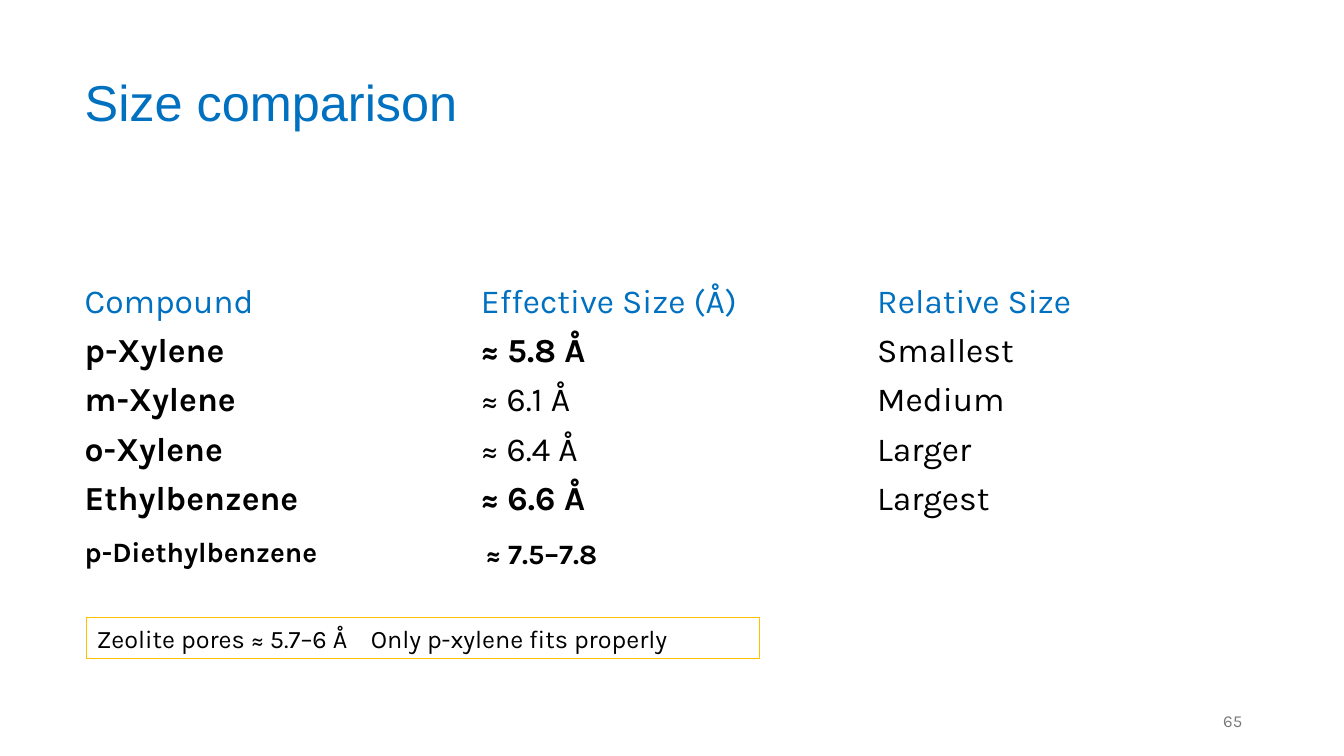
from pptx import Presentation
from pptx.dml.color import RGBColor
from pptx.enum import shapes, text
from pptx.oxml import parse_xml
from pptx.oxml.ns import nsdecls
from pptx.util import Inches, Pt

BLUE, BLACK, GREY, AMBER = "0070C0", "000000", "797979", "FFC000"
LEFT = 0.74
COLUMN_WIDTH = 3.93
ROW_HEIGHT = 0.49

# Each cell holds its wording and whether it is bold.
SIZES = [
    [("Compound", False), ("Effective Size (Å)", False), ("Relative Size", False)],
    [("p-Xylene", True), ("≈ 5.8 Å", True), ("Smallest", False)],
    [("m-Xylene", True), ("≈ 6.1 Å", False), ("Medium", False)],
    [("o-Xylene", True), ("≈ 6.4 Å", False), ("Larger", False)],
    [("Ethylbenzene", True), ("≈ 6.6 Å", True), ("Largest", False)],
]


def rgb(value):
    return RGBColor.from_string(value)


def set_font(paragraph, size, color, bold=False, name="Karla"):
    font = paragraph.font
    font.name, font.size, font.bold = name, Pt(size), bold
    font.color.rgb = rgb(color)


def add_title(slide, wording, left, top, width, height):
    title = slide.shapes.title
    title.left, title.top = Inches(left), Inches(top)
    title.width, title.height = Inches(width), Inches(height)
    frame = title.text_frame
    frame.text = wording
    frame.vertical_anchor = text.MSO_ANCHOR.MIDDLE
    heading = frame.paragraphs[0]
    heading.alignment = text.PP_ALIGN.LEFT
    heading.line_spacing = 0.9
    set_font(heading, 36, BLUE, name="Arial")


def add_plain_table(slide, rows, left, top, column_width, row_height, size, header=False):
    """Add a table without fills; with header, its first row is blue."""
    columns = len(rows[0])
    table = slide.shapes.add_table(
        len(rows), columns, Inches(left), Inches(top),
        Inches(column_width * columns), Inches(row_height * len(rows))).table
    table.first_row = table.horz_banding = False
    for r, row in enumerate(rows):
        table.rows[r].height = Inches(row_height)
        for c, (wording, bold) in enumerate(row):
            cell = table.cell(r, c)
            cell.fill.background()
            cell.margin_top = cell.margin_bottom = Inches(0.04)
            cell.vertical_anchor = text.MSO_ANCHOR.MIDDLE
            cell.text = wording
            color = BLUE if header and r == 0 else BLACK
            set_font(cell.text_frame.paragraphs[0], size, color, bold)


def add_pore_note(slide, left, top, width, height):
    note = slide.shapes.add_shape(
        shapes.MSO_SHAPE.RECTANGLE,
        Inches(left), Inches(top), Inches(width), Inches(height))
    note.shadow.inherit = False
    note.fill.background()
    note.line.color.rgb = rgb(AMBER)
    note.line.width = Pt(0.75)
    frame = note.text_frame
    frame.word_wrap = True
    frame.vertical_anchor = text.MSO_ANCHOR.TOP
    frame.text = "Zeolite pores ≈ 5.7–6 Å\tOnly p-xylene fits properly"
    line = frame.paragraphs[0]
    line.alignment = text.PP_ALIGN.LEFT
    line._p.get_or_add_pPr().append(parse_xml(
        f'<a:tabLst {nsdecls("a")}><a:tab pos="{Inches(2.72)}" algn="l"/></a:tabLst>'))
    set_font(line, 18, BLACK)


def add_page_number(slide, number, left, top, width, height):
    frame = slide.shapes.add_textbox(
        Inches(left), Inches(top), Inches(width), Inches(height)).text_frame
    frame.word_wrap = True
    frame.vertical_anchor = text.MSO_ANCHOR.MIDDLE
    frame.text = number
    frame.paragraphs[0].alignment = text.PP_ALIGN.RIGHT
    set_font(frame.paragraphs[0], 12, GREY)


def main():
    deck = Presentation()
    deck.slide_width, deck.slide_height = Inches(13.33), Inches(7.5)
    slide = deck.slides.add_slide(deck.slide_layouts.get_by_name("Title Only"))
    add_title(slide, "Size comparison", LEFT, 0.32, 11.5, 1.45)
    add_plain_table(slide, SIZES, LEFT, 2.75, COLUMN_WIDTH, ROW_HEIGHT, 24, header=True)
    add_page_number(slide, "65", 9.42, 6.95, 3, 0.4)
    add_plain_table(slide, [[("p-Diethylbenzene", True)]], LEFT, 5.27, 11.5, 0.43, 20)
    add_plain_table(slide, [[("≈ 7.5–7.8", True)]], 4.72, 5.29, 4.57, 0.43, 20)
    add_pore_note(slide, 0.86, 6.13, 6.67, 0.4)
    deck.save("out.pptx")


if __name__ == "__main__":
    main()
